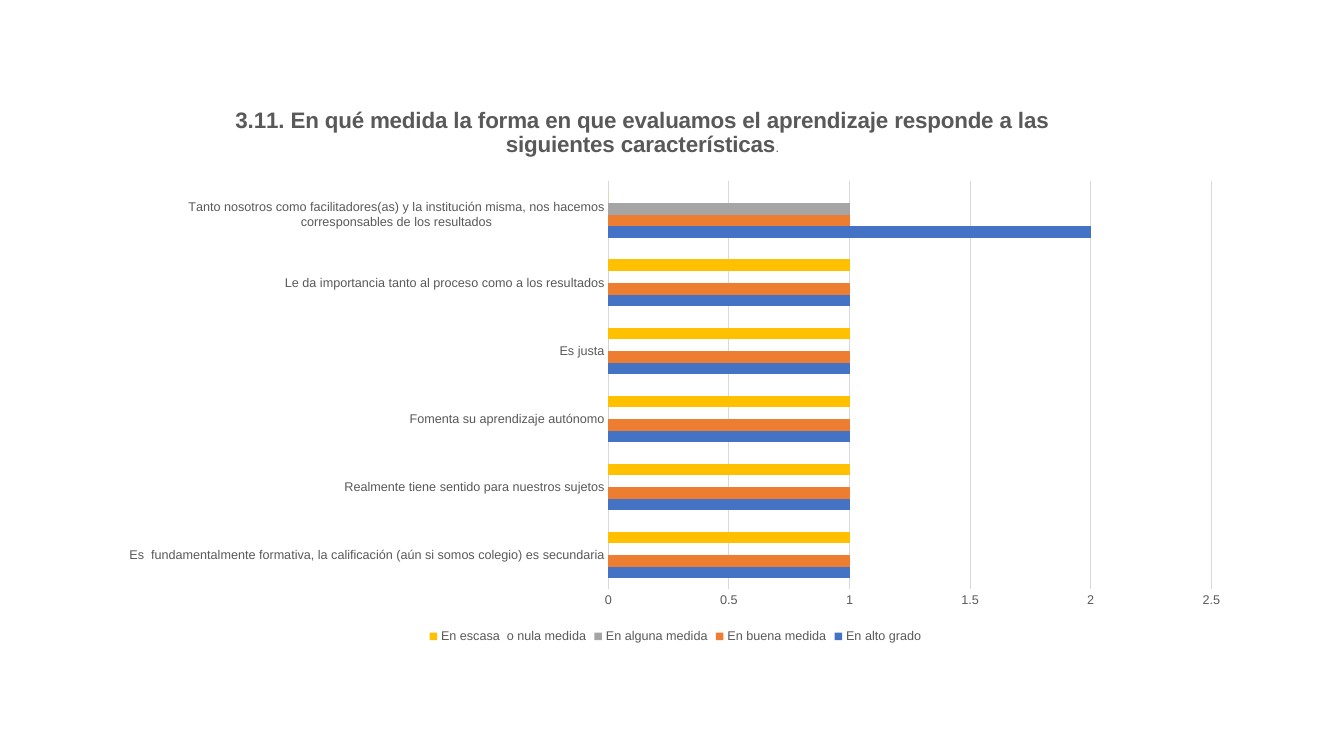
"""Build a slide with one clustered bar chart on how learning is assessed."""
from lxml import etree
from pptx import Presentation
from pptx.chart.data import CategoryChartData
from pptx.dml.color import RGBColor
from pptx.enum.chart import XL_CHART_TYPE, XL_LEGEND_POSITION, XL_TICK_MARK
from pptx.oxml.ns import qn
from pptx.util import Inches, Pt

BARS = XL_CHART_TYPE.BAR_CLUSTERED
BOTTOM = XL_LEGEND_POSITION.BOTTOM
NO_TICK = XL_TICK_MARK.NONE

WIDE, HIGH = 13.33, 7.5
FRAME = (0.08, 0.125, 0.845, 0.732)
TITLE_AT = {"x": 0.11, "y": 0.016}
PLOT_AT = {"x": 0.441, "y": 0.156, "w": 0.531, "h": 0.738}
FONT, GREY, PALE = "Arial", "595959", "D9D9D9"
TITLE = [
    ("3.11. En qué medida la forma en que evaluamos el aprendizaje "
     "responde a las siguientes características", 16, True),
    (".", 9, False),
]
TRAITS = [
    "Es  fundamentalmente formativa, la calificación (aún si somos colegio) es secundaria",
    "Realmente tiene sentido para nuestros sujetos",
    "Fomenta su aprendizaje autónomo",
    "Es justa",
    "Le da importancia tanto al proceso como a los resultados",
    "Tanto nosotros como facilitadores(as) y la institución misma, "
    "nos hacemos corresponsables de los resultados",
]
GRADES = [
    ("En alto grado", (1, 1, 1, 1, 1, 2), "4472C4"),
    ("En buena medida", (1, 1, 1, 1, 1, 1), "ED7D31"),
    ("En alguna medida", (0, 0, 0, 0, 0, 1), "A5A5A5"),
    ("En escasa  o nula medida", (1, 1, 1, 1, 1, 0), "FFC000"),
]


def color(code):
    """Turn a hex string into a colour."""
    return RGBColor.from_string(code)


def style(font, size=9, bold=False):
    """Set the common font with a size and weight."""
    font.name, font.size, font.bold = FONT, Pt(size), bold
    font.color.rgb = color(GREY)


def rule(line):
    """Draw a thin pale line."""
    line.color.rgb = color(PALE)
    line.width = Pt(0.75)


def place(node, index, spots, inner=False):
    """Give a chart part a fixed place as shares of the chart."""
    for old in node.findall(qn("c:layout")):
        node.remove(old)
    layout = etree.Element(qn("c:layout"))
    manual = etree.SubElement(layout, qn("c:manualLayout"))
    marks = [("layoutTarget", "inner")] if inner else []
    marks += [("xMode", "edge"), ("yMode", "edge"), *spots.items()]
    for name, value in marks:
        etree.SubElement(manual, qn("c:" + name)).set("val", str(value))
    node.insert(index, layout)


def add_bars(slide):
    """Add the chart with its data and series colours."""
    data = CategoryChartData()
    data.categories = TRAITS
    for name, values, _ in GRADES:
        data.add_series(name, values)
    box = [Inches(share * size) for share, size in zip(FRAME, (WIDE, HIGH) * 2)]
    chart = slide.shapes.add_chart(BARS, *box, data).chart
    plot = chart.plots[0]
    plot.gap_width, plot.vary_by_categories = 182, False
    for series, (_, _, code) in zip(plot.series, GRADES):
        series.format.fill.solid()
        series.format.fill.fore_color.rgb = color(code)
    return chart


def add_title(chart):
    """Write the chart title run by run."""
    chart.has_title = True
    title = chart.chart_title
    para = title.text_frame.paragraphs[0]
    for text, size, bold in TITLE:
        run = para.add_run()
        run.text = text
        style(run.font, size, bold)
    title.include_in_layout = False
    place(title._element, 1, TITLE_AT)


def dress(chart):
    """Style the axes, the grid and the legend."""
    style(chart.font)
    traits, scale = chart.category_axis, chart.value_axis
    for axis in (traits, scale):
        axis.major_tick_mark = axis.minor_tick_mark = NO_TICK
        style(axis.tick_labels.font)
    rule(traits.format.line)
    scale.format.line.fill.background()
    scale.minimum_scale, scale.maximum_scale, scale.major_unit = 0, 2.5, 0.5
    scale.has_major_gridlines = True
    rule(scale.major_gridlines.format.line)
    chart.has_legend = True
    chart.legend.position = BOTTOM
    chart.legend.include_in_layout = False
    style(chart.legend.font)
    place(chart._chartSpace.chart.plotArea, 0, PLOT_AT, True)


def main():
    """Build and save the slide."""
    deck = Presentation()
    deck.slide_width, deck.slide_height = Inches(WIDE), Inches(HIGH)
    slide = deck.slides.add_slide(deck.slide_layouts[6])
    chart = add_bars(slide)
    add_title(chart)
    dress(chart)
    deck.save("out.pptx")


if __name__ == "__main__":
    main()
